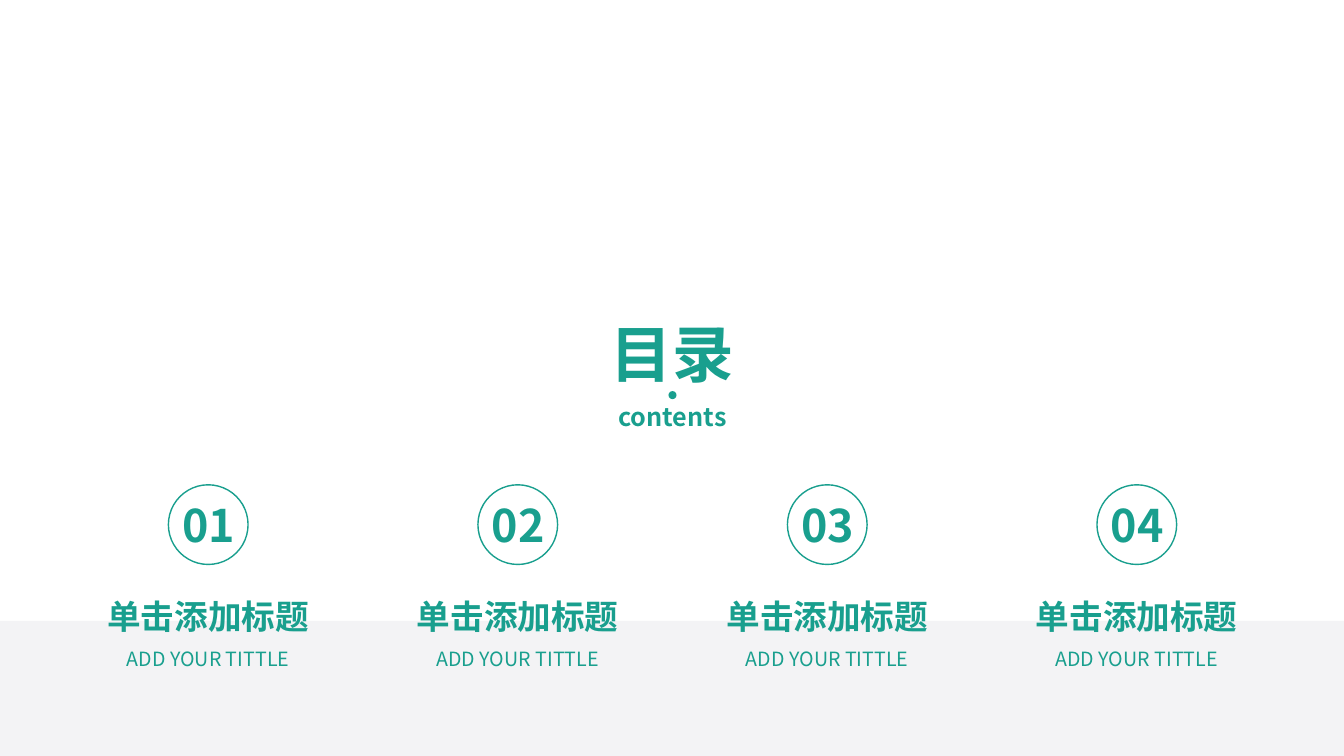
from pptx import Presentation
from pptx.dml.color import RGBColor
from pptx.enum.shapes import MSO_SHAPE
from pptx.enum.text import MSO_ANCHOR, MSO_AUTO_SIZE, PP_ALIGN
from pptx.oxml.ns import qn
from pptx.util import Inches, Pt

RECT, OVAL = MSO_SHAPE.RECTANGLE, MSO_SHAPE.OVAL
TOP, CENTER = MSO_ANCHOR.TOP, PP_ALIGN.CENTER
GROW = MSO_AUTO_SIZE.SHAPE_TO_FIT_TEXT
FONT = "Noto Sans CJK SC"
COLORS = {"teal": "199F8E", "band": "F3F3F5"}


def rgb(name):
    return RGBColor.from_string(COLORS[name])


def write(tf, text, size=14, bold=False, color="teal"):
    """Put one centred line of formatted text in a text frame."""
    tf.word_wrap = True
    tf.auto_size = GROW
    tf.vertical_anchor = TOP
    p = tf.paragraphs[0]
    p.alignment = CENTER
    p.line_spacing = 1.0
    p.space_before = Pt(0)
    r = p.add_run()
    r.text = text
    r.font.name = FONT
    r.font.size = Pt(size)
    r.font.bold = bold
    r.font.color.rgb = rgb(color)
    # East Asian characters take their own typeface entry
    ea = r.font._element.makeelement(qn("a:ea"), {"typeface": FONT})
    r.font._element.find(qn("a:latin")).addnext(ea)


class Deck:
    """Holds the presentation and the current slide."""

    def __init__(self):
        self.prs = Presentation()
        self.prs.slide_width = Inches(13.33)
        self.prs.slide_height = Inches(7.5)
        self.s = self.prs.slides.add_slide(self.prs.slide_layouts[5])

    def title(self, text, x, y, w, h, **fmt):
        sp = self.s.shapes.title
        sp.left, sp.top, sp.width, sp.height = map(Inches, (x, y, w, h))
        write(sp.text_frame, text, **fmt)

    def text(self, text, x, y, w, h, **fmt):
        sp = self.s.shapes.add_textbox(*map(Inches, (x, y, w, h)))
        write(sp.text_frame, text, **fmt)

    def shape(self, kind, x, y, w, h, fill=None, line=None):
        sp = self.s.shapes.add_shape(kind, *map(Inches, (x, y, w, h)))
        sp.shadow.inherit = False
        if fill:
            sp.fill.solid()
            sp.fill.fore_color.rgb = rgb(fill)
        else:
            sp.fill.background()
        if line:
            sp.line.color.rgb = rgb(line)
            sp.line.width = Pt(1)
        else:
            sp.line.fill.background()


def main():
    deck = Deck()

    # Band along the bottom
    deck.shape(RECT, 0, 6.16, 13.33, 1.34, fill="band")

    # Heading with its dot and subtitle
    deck.title("目录", 5.71, 3.08, 1.92, 0.84, size=44, bold=True)
    deck.shape(OVAL, 6.63, 3.88, 0.08, 0.08, fill="teal")
    deck.text("contents", 5.71, 3.93, 1.92, 0.4, size=18, bold=True)

    # Four numbered entries at an equal pitch
    for i in range(4):
        x = 0.55 + 3.07 * i
        deck.shape(OVAL, x + 1.12, 4.81, 0.79, 0.79, line="teal")
        deck.text(f"{i + 1:02}", x + 1.09, 4.89, 0.86, 0.64, size=32, bold=True)
        deck.text("单击添加标题", x, 5.86, 3.03, 0.5, size=24, bold=True)
        deck.text("ADD YOUR TITTLE", x, 6.37, 3.03, 0.34)

    deck.prs.save("out.pptx")


if __name__ == "__main__":
    main()
